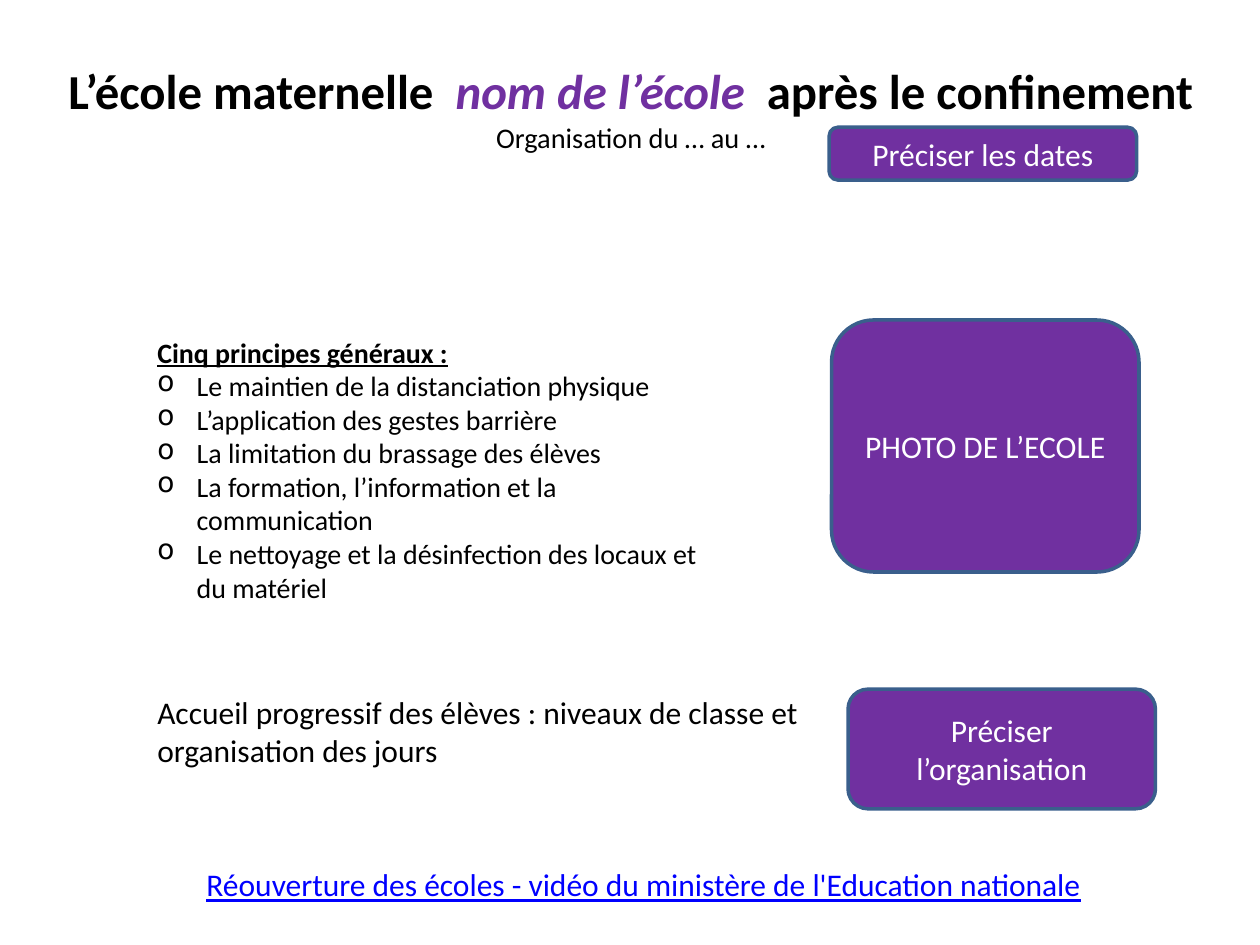
"""Build the slide announcing how a nursery school reopens after lockdown."""
from lxml.etree import SubElement
from pptx import Presentation
from pptx.dml.color import RGBColor
from pptx.enum.shapes import MSO_SHAPE as Shape
from pptx.enum.text import MSO_ANCHOR as Anchor, MSO_AUTO_SIZE as AutoSize, PP_ALIGN as Align
from pptx.oxml.ns import qn
from pptx.util import Pt

BLACK = RGBColor(0x00, 0x00, 0x00)
WHITE = RGBColor(0xFF, 0xFF, 0xFF)
PURPLE = RGBColor(0x70, 0x30, 0xA0)
OUTLINE = RGBColor(0x3A, 0x5F, 0x8C)
LINK_BLUE = RGBColor(0x00, 0x00, 0xFF)

PRINCIPLES = [
    "Le maintien de la distanciation physique",
    "L’application des gestes barrière",
    "La limitation du brassage des élèves",
    "La formation, l’information et la communication",
    "Le nettoyage et la désinfection des locaux et du matériel",
]


def write(paragraph, text, size=18, color=BLACK, bold=False, italic=False, underline=False):
    """Add a formatted run to a paragraph."""
    run = paragraph.add_run()
    run.text = text
    font = run.font
    font.name, font.size, font.color.rgb = "Calibri", Pt(size), color
    font.bold, font.italic, font.underline = bold, italic, underline


class SlideBuilder:
    """Holds the current slide and the shared style of its elements."""

    indent = 22.5
    label_width = 175.7

    def __init__(self, slide):
        """Keep the slide to draw on."""
        self.slide = slide

    def title(self, left, top, width, height):
        """Place the title placeholder and return its paragraph."""
        heading = self.slide.shapes.title
        heading.left, heading.top = Pt(left), Pt(top)
        heading.width, heading.height = Pt(width), Pt(height)
        frame = heading.text_frame
        frame.auto_size = AutoSize.NONE
        frame.word_wrap = True
        frame.vertical_anchor = Anchor.TOP
        frame.margin_top = Pt(9)
        paragraph = frame.paragraphs[0]
        paragraph.alignment = Align.CENTER
        return paragraph

    def text(self, left, top, width, height, text, **style):
        """Add a wrapping text box and return its frame."""
        box = self.slide.shapes.add_textbox(Pt(left), Pt(top), Pt(width), Pt(height))
        frame = box.text_frame
        frame.word_wrap = True
        frame.auto_size = AutoSize.SHAPE_TO_FIT_TEXT
        write(frame.paragraphs[0], text, **style)
        return frame

    def bullet(self, frame, text, **style):
        """Append a bulleted paragraph with a hanging indent."""
        paragraph = frame.add_paragraph()
        properties = paragraph._p.get_or_add_pPr()
        properties.set("marL", str(Pt(self.indent)))
        properties.set("indent", str(-Pt(self.indent)))
        SubElement(properties, qn("a:buChar")).set("char", "o")
        write(paragraph, text, **style)

    def label(self, left, top, height, text):
        """Add a purple rounded box with centred white text."""
        box = self.slide.shapes.add_shape(
            Shape.ROUNDED_RECTANGLE, Pt(left), Pt(top), Pt(self.label_width), Pt(height))
        box.shadow.inherit = False
        box.fill.solid()
        box.fill.fore_color.rgb = PURPLE
        box.line.color.rgb = OUTLINE
        box.line.width = Pt(2)
        frame = box.text_frame
        frame.word_wrap = True
        frame.vertical_anchor = Anchor.MIDDLE
        frame.paragraphs[0].alignment = Align.CENTER
        write(frame.paragraphs[0], text, color=WHITE)


def main():
    """Compose and save the presentation."""
    deck = Presentation()
    deck.slide_width, deck.slide_height = Pt(720), Pt(540)
    builder = SlideBuilder(deck.slides.add_slide(deck.slide_layouts[5]))

    heading = builder.title(20.2, 25.9, 680.4, 90.7)
    write(heading, "L’école maternelle  ", size=27.9, bold=True)
    write(heading, "nom de l’école  ", size=27.9, color=PURPLE, bold=True, italic=True)
    write(heading, "après le confinement", size=27.9, bold=True)
    heading.add_line_break()
    write(heading, "Organisation du … au …", size=16.2)

    principles = builder.text(82.8, 187.9, 334.8, 167,
                              "Cinq principes généraux :", size=16, bold=True, underline=True)
    for principle in PRINCIPLES:
        builder.bullet(principles, principle, size=16)

    builder.text(110.9, 491, 572.4, 28.8,
                 "Réouverture des écoles - vidéo du ministère de l'Education nationale",
                 color=LINK_BLUE, underline=True)
    builder.text(82.8, 392.4, 391, 51.1,
                 "Accueil progressif des élèves : niveaux de classe et organisation des jours")

    builder.label(475.2, 182.9, 144, "PHOTO DE L’ECOLE")
    builder.label(473.8, 72.7, 30.2, "Préciser les dates")
    builder.label(484.6, 393.8, 68.4, "Préciser l’organisation")

    deck.save("out.pptx")


if __name__ == "__main__":
    main()
